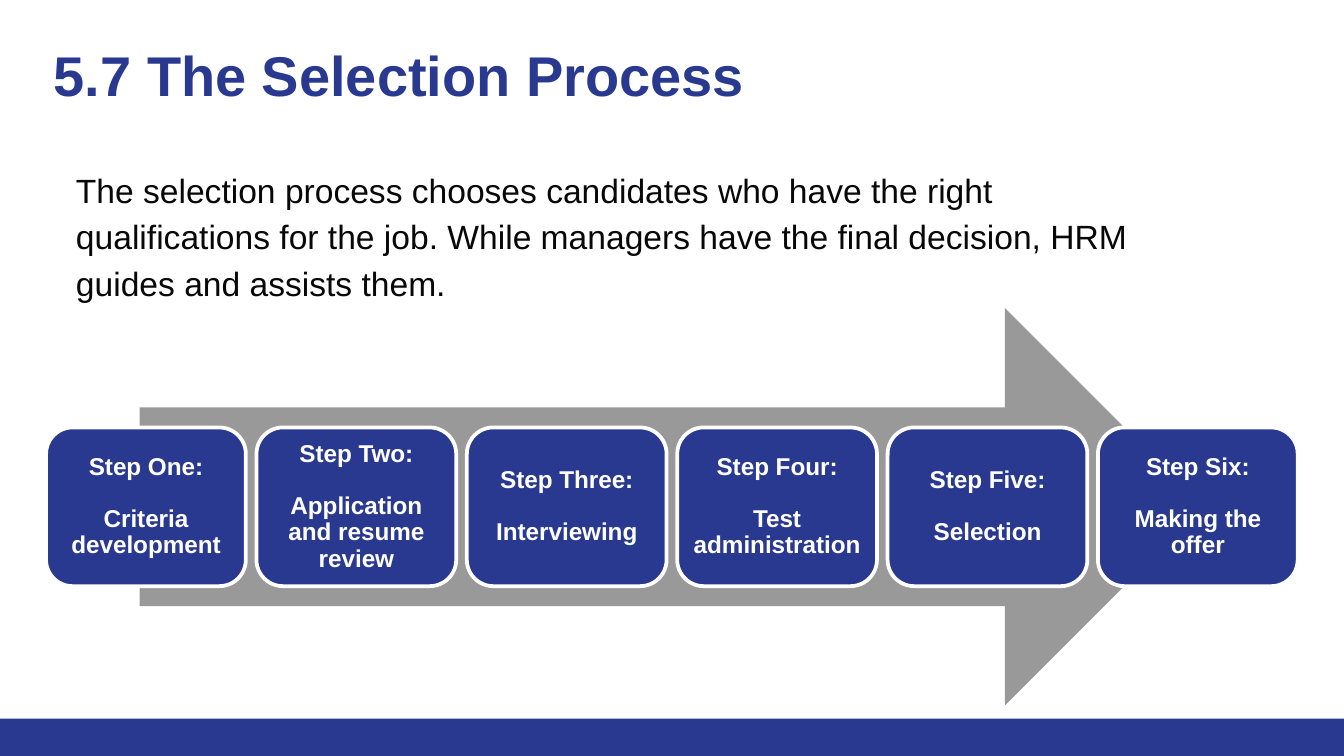
from lxml.etree import SubElement
from pptx import Presentation
from pptx.dml.color import RGBColor
from pptx.enum.shapes import MSO_SHAPE
from pptx.enum.text import MSO_ANCHOR, MSO_AUTO_SIZE, PP_ALIGN
from pptx.oxml.ns import qn
from pptx.util import Pt

TITLE = "5.7 The Selection Process"
INTRO = ("The selection process chooses candidates who have the right "
         "qualifications for the job. While managers have the final decision, "
         "HRM guides and assists them.")
STEPS = [
    ("Step One:", "Criteria development"),
    ("Step Two:", "Application and resume review"),
    ("Step Three:", "Interviewing"),
    ("Step Four:", "Test administration"),
    ("Step Five:", "Selection"),
    ("Step Six:", "Making the offer"),
]

BLUE, GRAY, WHITE, BLACK = "2A3990", "999999", "FFFFFF", "080808"
SLIDE_WIDTH, SLIDE_HEIGHT = 720, 405
STEP_LEFT, STEP_TOP, STEP_WIDTH, STEP_HEIGHT = 24.7, 229, 107, 85
STEP_PITCH = 112.7


def color(hex_code):
    return RGBColor.from_string(hex_code)


def place(shape, left, top, width, height):
    shape.left, shape.top = Pt(left), Pt(top)
    shape.width, shape.height = Pt(width), Pt(height)


def write(shape, *texts, size, ink, bold=False, align=PP_ALIGN.LEFT,
          anchor=MSO_ANCHOR.TOP, inset=7.2, spacing=1.0, gap=0, indent=0):
    """Fill a shape with one paragraph per text, gap points apart."""
    frame = shape.text_frame
    frame.word_wrap = True
    frame.auto_size = MSO_AUTO_SIZE.NONE
    frame.vertical_anchor = anchor
    frame.margin_left = frame.margin_right = Pt(inset)
    frame.margin_top = frame.margin_bottom = Pt(inset)
    for index, text in enumerate(texts):
        para = frame.add_paragraph() if index else frame.paragraphs[0]
        properties = para._p.get_or_add_pPr()
        properties.set("marL", str(Pt(indent)))
        properties.set("indent", "0")
        SubElement(properties, qn("a:buNone"))
        para.alignment = align
        para.line_spacing = spacing
        para.space_before = Pt(gap if index else 0)
        para.space_after = Pt(0)
        span = para.add_run()
        span.text = text
        span.font.name = "Arial"
        span.font.size = Pt(size)
        span.font.bold = bold
        span.font.color.rgb = color(ink)


def add_block(page, kind, left, top, width, height, fill, outline=None):
    block = page.shapes.add_shape(kind, Pt(left), Pt(top), Pt(width), Pt(height))
    block.shadow.inherit = False
    block.fill.solid()
    block.fill.fore_color.rgb = color(fill)
    if outline:
        block.line.color.rgb = color(outline)
        block.line.width = Pt(2)
    else:
        block.line.fill.background()
    return block


def main():
    deck = Presentation()
    deck.slide_width, deck.slide_height = Pt(SLIDE_WIDTH), Pt(SLIDE_HEIGHT)
    page = deck.slides.add_slide(deck.slide_layouts[1])

    title, body = page.shapes.title, page.placeholders[1]
    place(title, 21.6, 14.4, 671, 47.5)
    write(title, TITLE, size=30, ink=BLUE, bold=True)
    place(body, 24.5, 80.6, 600, 98)
    write(body, INTRO, size=18, ink=BLACK, spacing=1.15, indent=9)

    add_block(page, MSO_SHAPE.RECTANGLE, 0, 385, SLIDE_WIDTH, 20, BLUE)
    add_block(page, MSO_SHAPE.RIGHT_ARROW, 74.9, 165, 570, 213, GRAY)

    for index, step in enumerate(STEPS):
        box = add_block(page, MSO_SHAPE.ROUNDED_RECTANGLE,
                        STEP_LEFT + index * STEP_PITCH, STEP_TOP,
                        STEP_WIDTH, STEP_HEIGHT, BLUE, outline=WHITE)
        write(box, *step, size=13, ink=WHITE, bold=True, align=PP_ALIGN.CENTER,
              anchor=MSO_ANCHOR.MIDDLE, inset=3.6, spacing=0.9, gap=14)

    deck.save("out.pptx")


if __name__ == "__main__":
    main()
